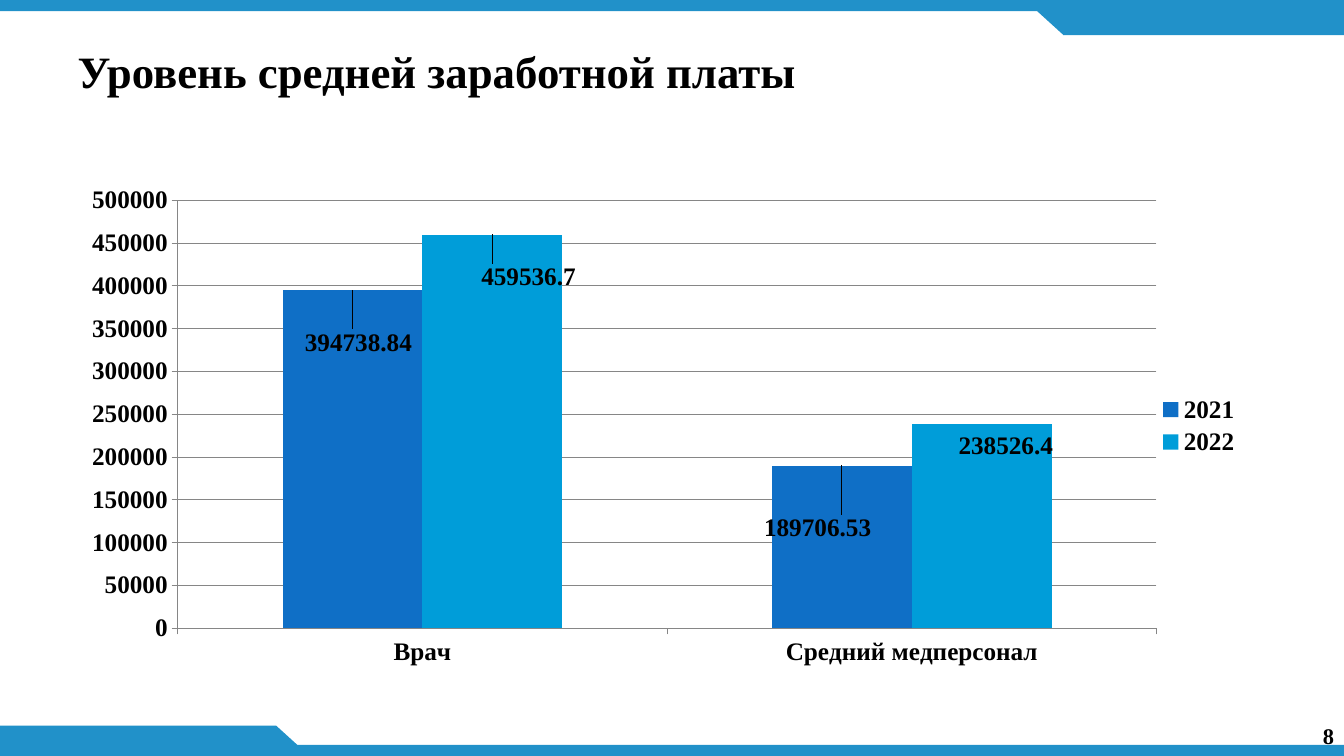
from lxml import etree
from pptx import Presentation
from pptx.chart.data import CategoryChartData
from pptx.dml.color import RGBColor
from pptx.enum.chart import XL_CHART_TYPE, XL_LABEL_POSITION, XL_LEGEND_POSITION, XL_TICK_MARK
from pptx.enum.shapes import MSO_SHAPE
from pptx.enum.text import MSO_ANCHOR, PP_ALIGN
from pptx.oxml.ns import qn
from pptx.util import Inches, Pt

# Content
TITLE = "Уровень средней заработной платы"
PAGE_NUMBER = "8"
CATEGORIES = ["Врач", "Средний медперсонал"]
FONT = "Times New Roman"
BLACK = RGBColor(0x00, 0x00, 0x00)
GRID_GRAY = RGBColor(0x86, 0x86, 0x86)
BAND_BLUE = RGBColor(0x21, 0x91, 0xC9)
# Year, values, bar colour, shift of each label as a share of the chart
SALARIES = [
    ("2021", (394738.84, 189706.53), RGBColor(0x0F, 0x6F, 0xC6), ((0.005, 0.14), (-0.02, 0.16))),
    ("2022", (459536.7, 238526.4), RGBColor(0x00, 0x9D, 0xD9), ((0.03, 0.12), (0.02, 0.08))),
]
# Preset, left, top, width, height, rotation
BANDS = [
    (MSO_SHAPE.RECTANGLE, 0, 0, 13.33, 0.11, 0),
    (MSO_SHAPE.RECTANGLE, 0, 7.39, 13.33, 0.11, 0),
    (MSO_SHAPE.RECTANGLE, 10.55, 0.05, 2.78, 0.3, 0),
    (MSO_SHAPE.FLOWCHART_MERGE, 10.22, 0.05, 0.66, 0.3, 0),
    (MSO_SHAPE.RECTANGLE, 0, 7.2, 2.74, 0.3, 0),
    (MSO_SHAPE.FLOWCHART_MERGE, 2.41, 7.2, 0.66, 0.3, 180),
]


def style_font(font, size):
    font.name = FONT
    font.size = Pt(size)
    font.bold = True
    font.color.rgb = BLACK


def make_layout(**settings):
    layout = etree.Element(qn("c:layout"))
    manual = etree.SubElement(layout, qn("c:manualLayout"))
    for name, value in settings.items():
        etree.SubElement(manual, qn(f"c:{name}")).set("val", str(value))
    return layout


def place_after(anchor, layout):
    """Put the layout behind its anchor, in place of any older one."""
    for old in anchor.getparent().findall(qn("c:layout")):
        anchor.getparent().remove(old)
    anchor.addnext(layout)


deck = Presentation()
deck.slide_width, deck.slide_height = Inches(13.33), Inches(7.5)
page = deck.slides.add_slide(deck.slide_layouts[5])

# Blue bands
for preset, left, top, width, height, rotation in BANDS:
    band = page.shapes.add_shape(preset, Inches(left), Inches(top), Inches(width), Inches(height))
    band.rotation = rotation
    band.shadow.inherit = False
    band.fill.solid()
    band.fill.fore_color.rgb = BAND_BLUE
    band.line.fill.background()

# Title
title = page.shapes.title
title.left, title.top, title.width, title.height = Inches(0.67), Inches(0.3), Inches(12), Inches(0.87)
title.text_frame.text = TITLE
title.text_frame.vertical_anchor = MSO_ANCHOR.MIDDLE
para = title.text_frame.paragraphs[0]
para.alignment = PP_ALIGN.LEFT
para.line_spacing = 0.9
style_font(para.runs[0].font, 32)

# Page number
number_box = page.shapes.add_textbox(Inches(10.22), Inches(7.1), Inches(3.11), Inches(0.4))
number_box.text_frame.word_wrap = True
number_box.text_frame.vertical_anchor = MSO_ANCHOR.MIDDLE
number_box.text_frame.text = PAGE_NUMBER
para = number_box.text_frame.paragraphs[0]
para.alignment = PP_ALIGN.RIGHT
style_font(para.runs[0].font, 16)

# Salary chart
chart_data = CategoryChartData()
chart_data.categories = CATEGORIES
for year, values, _, _ in SALARIES:
    chart_data.add_series(year, values)
chart = page.shapes.add_chart(
    XL_CHART_TYPE.COLUMN_CLUSTERED, Inches(0.67), Inches(1.75), Inches(12), Inches(4.95), chart_data
).chart
chart.has_title = False
style_font(chart.font, 18)
plot = chart.plots[0]
plot.gap_width = 150
plot.overlap = 0
plot.vary_by_categories = False

# Axes
value_axis = chart.value_axis
value_axis.minimum_scale, value_axis.maximum_scale, value_axis.major_unit = 0, 500000, 50000
value_axis.has_major_gridlines = True
value_axis.major_gridlines.format.line.color.rgb = GRID_GRAY
for axis in (chart.category_axis, value_axis):
    axis.major_tick_mark = XL_TICK_MARK.OUTSIDE
    axis.format.line.color.rgb = GRID_GRAY
    style_font(axis.tick_labels.font, 18)

# Bars and their labels
for series, (_, _, color, shifts) in zip(plot.series, SALARIES):
    series.format.fill.solid()
    series.format.fill.fore_color.rgb = color
    series.data_labels.show_value = True
    for index, (x, y) in enumerate(shifts):
        label = series.points[index].data_label
        label.position = XL_LABEL_POSITION.OUTSIDE_END
        style_font(label.font, 18)
    for element, (x, y) in zip(series.data_labels._element.findall(qn("c:dLbl")), shifts):
        place_after(element.find(qn("c:idx")), make_layout(x=x, y=y))

# Legend and plot area
chart.has_legend = True
chart.legend.position = XL_LEGEND_POSITION.RIGHT
chart.legend.include_in_layout = False
style_font(chart.legend.font, 18)
place_after(
    chart.legend._element.find(qn("c:legendPos")),
    make_layout(xMode="edge", yMode="edge", x=0.895, y=0.43, w=0.08, h=0.14),
)
plot_area = chart._chartSpace.chart.plotArea
for old in plot_area.findall(qn("c:layout")):
    plot_area.remove(old)
plot_area.insert(0, make_layout(
    layoutTarget="inner", xMode="edge", yMode="edge", x=0.091, y=0.048, w=0.809, h=0.858))

deck.save("out.pptx")
